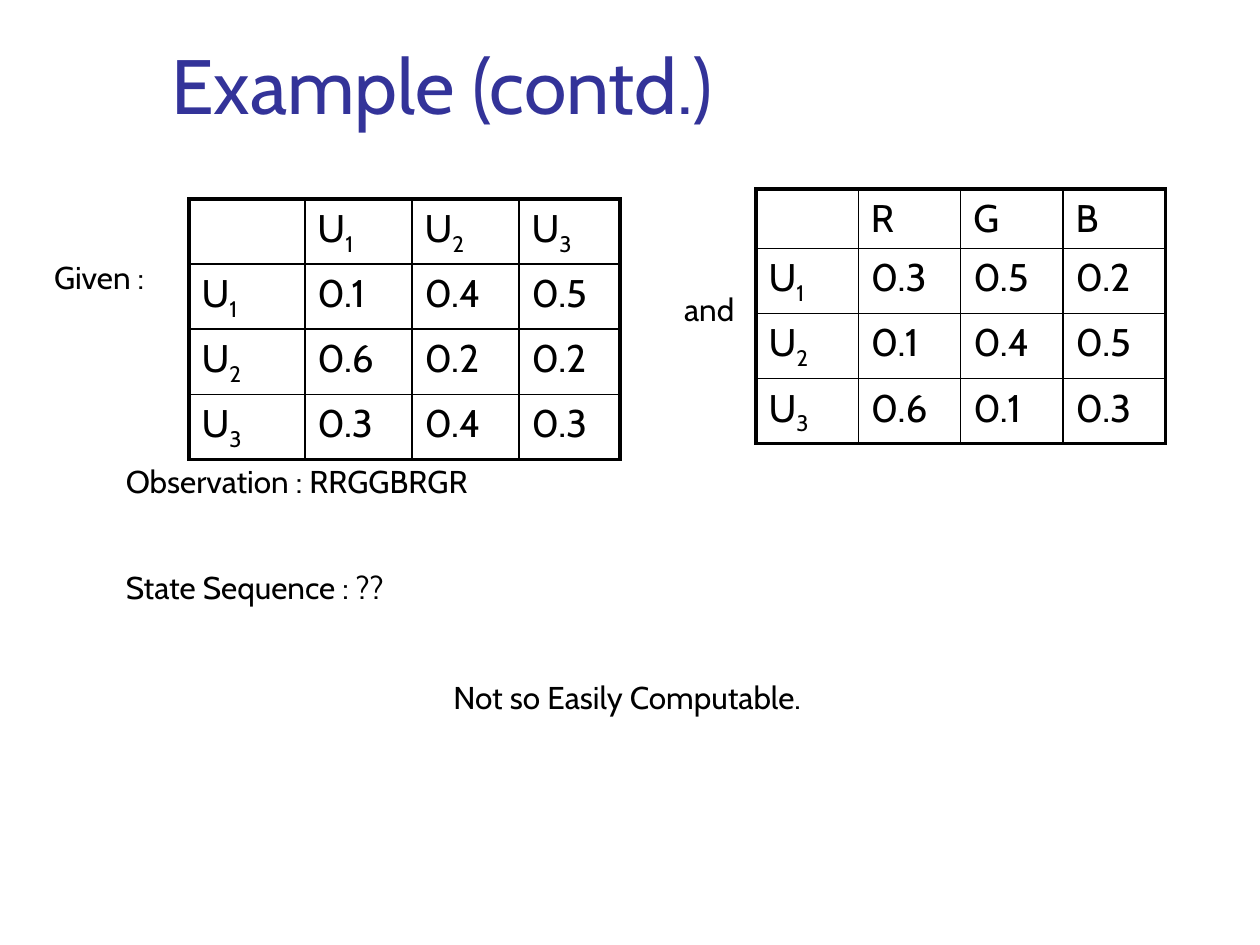
from lxml import etree
from pptx import Presentation
from pptx.dml.color import RGBColor
from pptx.enum import text
from pptx.oxml import ns
from pptx.util import Pt

FONT = "Cabin"
BLACK = RGBColor(0x00, 0x00, 0x00)
INDIGO = RGBColor(0x33, 0x33, 0x99)
THIN, THICK = Pt(1), Pt(2.25)


def set_font(p, size, color):
    p.font.name = FONT
    p.font.size = Pt(size)
    p.font.color.rgb = color


def add_border(cell, index, side, width):
    """Draw one side (L, R, T or B) of a cell; borders come first in tcPr, in index order."""
    ln = etree.Element(ns.qn(f"a:ln{side}"), w=str(width))
    fill = etree.SubElement(ln, ns.qn("a:solidFill"))
    etree.SubElement(fill, ns.qn("a:srgbClr"), val=str(BLACK))
    cell._tc.get_or_add_tcPr().insert(index, ln)


prs = Presentation()
prs.slide_width, prs.slide_height = Pt(720), Pt(540)
s = prs.slides.add_slide(prs.slide_layouts[5])

title = s.shapes.title
title.left, title.top, title.width, title.height = Pt(90.7), Pt(16.6), Pt(613.4), Pt(61.2)
tf = title.text_frame
tf.text = "Example (contd.)"
tf.auto_size = text.MSO_AUTO_SIZE.NONE
tf.vertical_anchor = text.MSO_ANCHOR.BOTTOM
tf.paragraphs[0].alignment = text.PP_ALIGN.LEFT
set_font(tf.paragraphs[0], 44, INDIGO)

# An underscore marks the digit after it as a subscript
transitions = [
    ["", "U_1", "U_2", "U_3"],
    ["U_1", "0.1", "0.4", "0.5"],
    ["U_2", "0.6", "0.2", "0.2"],
    ["U_3", "0.3", "0.4", "0.3"],
]
emissions = [
    ["", "R", "G", "B"],
    ["U_1", "0.3", "0.5", "0.2"],
    ["U_2", "0.1", "0.4", "0.5"],
    ["U_3", "0.6", "0.1", "0.3"],
]
tables = [
    (transitions, 108, 113.8, [66.2, 61.2, 61.2, 57.6], [37.1] * 4),
    (emissions, 432, 108, [58.5] * 4, [33.7] + [37.1] * 3),
]
for values, left, top, widths, heights in tables:
    frame = s.shapes.add_table(4, 4, Pt(left), Pt(top), Pt(sum(widths)), Pt(sum(heights)))
    table = frame.table
    table.first_row = table.horz_banding = False
    for column, width in zip(table.columns, widths):
        column.width = Pt(width)
    for row, height in zip(table.rows, heights):
        row.height = Pt(height)
    for i, row in enumerate(values):
        for j, value in enumerate(row):
            cell = table.cell(i, j)
            cell.fill.background()
            outer = {"L": j == 0, "R": j == 3, "T": i == 0, "B": i == 3}
            for index, (side, is_outer) in enumerate(outer.items()):
                add_border(cell, index, side, THICK if is_outer else THIN)
            p = cell.text_frame.paragraphs[0]
            set_font(p, 22, BLACK)
            before = etree.Element(ns.qn("a:spcBef"))
            etree.SubElement(before, ns.qn("a:spcPct"), val="20000")
            p._p.get_or_add_pPr().insert(0, before)
            base, _, subscript = value.partition("_")
            if base:
                p.add_run().text = base
            if subscript:
                r = p.add_run()
                r.text = subscript
                r.font._element.set("baseline", "-25000")

labels = [
    ("Given :", 23.8, 144, 71.3),
    ("Observation : RRGGBRGR", 64.8, 260.6, 232.6),
    ("State Sequence : ??", 64.8, 321.1, 177.8),
    ("Not so Easily Computable.", 252, 383.8, 226.8),
    ("and", 383.8, 162, 44.6),
]
for label, left, top, width in labels:
    sp = s.shapes.add_textbox(Pt(left), Pt(top), Pt(width), Pt(28.8))
    tf = sp.text_frame
    tf.text = label
    tf.word_wrap = False
    tf.auto_size = text.MSO_AUTO_SIZE.SHAPE_TO_FIT_TEXT
    set_font(tf.paragraphs[0], 18, BLACK)

prs.save("out.pptx")
